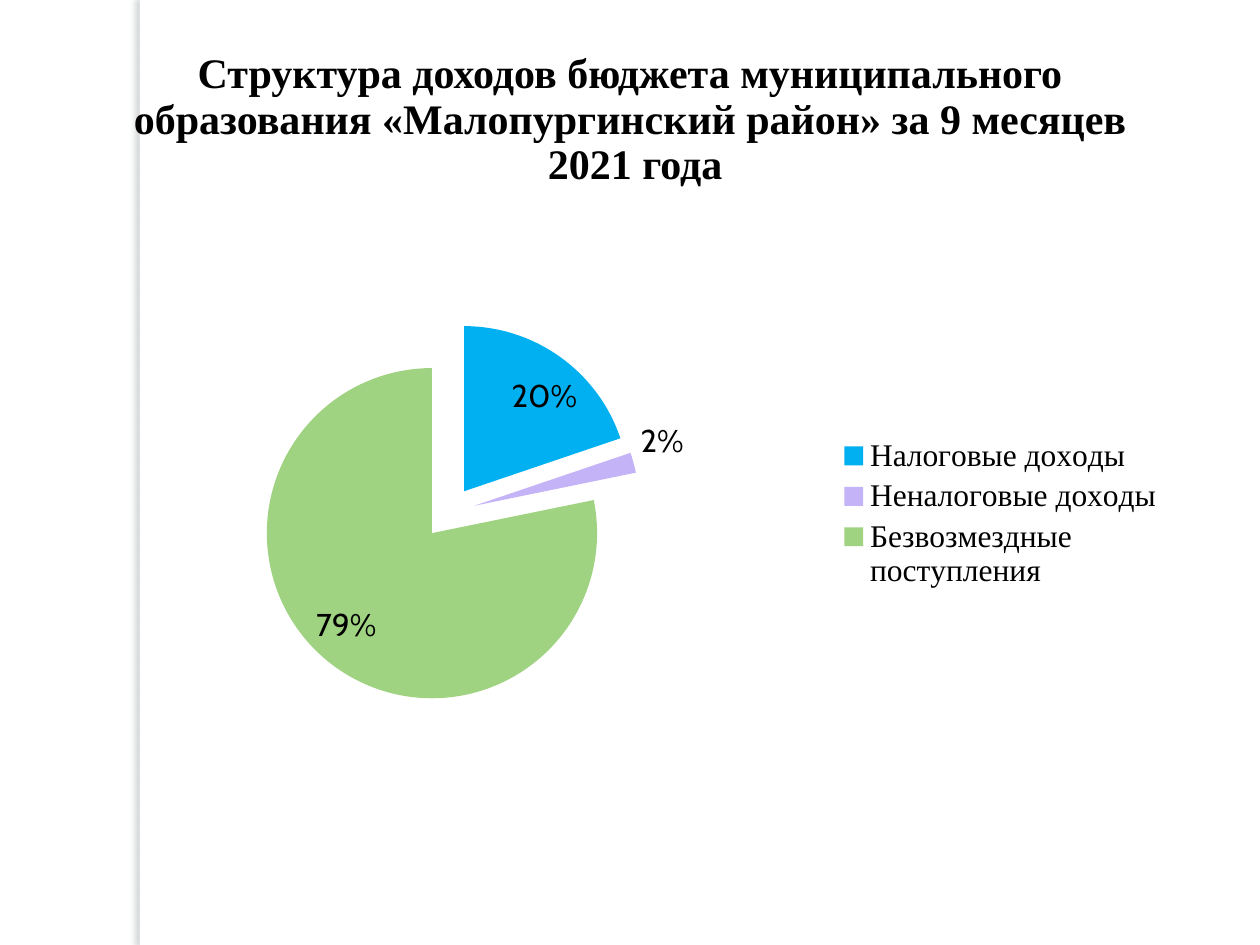
from lxml import etree
from pptx import Presentation
from pptx import util as u
from pptx.chart.data import CategoryChartData
from pptx.dml.color import RGBColor
from pptx.enum import chart as ch, shapes, text
from pptx.oxml import parse_xml
from pptx.oxml.ns import nsdecls, qn

# Content
TITLE = ("Структура доходов бюджета муниципального образования "
         "«Малопургинский район» за 9 месяцев\v 2021 года")
INCOME = [
    ("Налоговые доходы", 20, "tax"),
    ("Неналоговые доходы", 2, "other"),
    ("Безвозмездные поступления", 79, "grant"),
]
HEX = {"tax": "00B0F0", "other": "C5B3F7", "grant": "A0D381",
       "ink": "000000", "paper": "FFFFFF", "shade": "656E75"}
SERIF, SANS = "Times New Roman", "Cabin"
PLOT = {"x": 0.122, "y": 0.183, "w": 0.46, "h": 0.632}


def rgb(name):
    return RGBColor.from_string(HEX[name])


def style(font, face=SERIF, size=18, bold=False):
    font.name, font.size, font.bold = face, u.Pt(size), bold
    font.color.rgb = rgb("ink")


def write(frame, words, align=text.PP_ALIGN.CENTER, lead=0.9, **look):
    frame.text = words
    frame.word_wrap = True
    frame.vertical_anchor = text.MSO_ANCHOR.MIDDLE
    para = frame.paragraphs[0]
    para.alignment, para.line_spacing = align, lead
    for run in para.runs:
        style(run.font, **look)


def place(shape, left, top, width, height):
    shape.left, shape.top = u.Cm(left), u.Cm(top)
    shape.width, shape.height = u.Cm(width), u.Cm(height)


def add_strip(slide):
    strip = slide.shapes.add_shape(shapes.MSO_SHAPE.RECTANGLE, u.Cm(2.82), 0,
                                   u.Cm(0.2), u.Cm(19.05))
    strip.fill.solid()
    strip.fill.fore_color.rgb = rgb("paper")
    strip.line.fill.background()
    strip.shadow.inherit = False
    glow = strip._element.spPr.find(qn("a:effectLst"))
    glow.append(parse_xml(
        f'<a:outerShdw {nsdecls("a")} blurRad="{u.Pt(3)}" dist="{u.Pt(3)}" '
        f'dir="10800000"><a:srgbClr val="{HEX["shade"]}">'
        '<a:alpha val="25000"/></a:srgbClr></a:outerShdw>'))
    slide.shapes._spTree.insert(2, strip._element)  # behind the title


def add_pie(slide):
    data = CategoryChartData()
    data.categories = [name for name, _, _ in INCOME]
    data.add_series("Доходы", [share for _, share, _ in INCOME])
    pie = slide.shapes.add_chart(ch.XL_CHART_TYPE.PIE, u.Cm(1.07), u.Cm(4.24),
                                 u.Cm(22.66), u.Cm(12.22), data).chart
    style(pie.font, face=SANS)
    pie.has_title = False
    pie.has_legend = True
    pie.legend.position = ch.XL_LEGEND_POSITION.RIGHT
    pie.legend.include_in_layout = False
    style(pie.legend.font)

    # Slices
    plot = pie.plots[0]
    plot.vary_by_categories = True
    series = plot.series[0]
    for i, (_, _, tint) in enumerate(INCOME):
        fill = series.points[i].format.fill
        fill.solid()
        fill.fore_color.rgb = rgb(tint)
    burst = etree.Element(qn("c:explosion"), val="16")
    series._element.find(qn("c:dPt")).addprevious(burst)
    for point in series._element.findall(qn("c:dPt")):
        point.find(qn("c:spPr")).addprevious(
            etree.Element(qn("c:explosion"), val="16"))

    # Labels
    plot.has_data_labels = True
    labels = plot.data_labels
    labels.show_value = True
    labels.number_format = '0"%"'
    labels.number_format_is_linked = False
    labels.position = ch.XL_LABEL_POSITION.BEST_FIT
    style(labels.font, face=SANS)

    # Plot area
    area = pie._chartSpace.chart.plotArea
    for old in area.findall(qn("c:layout")):
        area.remove(old)
    spots = "".join(f'<c:{k} val="{v}"/>' for k, v in PLOT.items())
    area.insert(0, parse_xml(
        f'<c:layout {nsdecls("c")}><c:manualLayout>'
        '<c:layoutTarget val="inner"/><c:xMode val="edge"/>'
        f'<c:yMode val="edge"/>{spots}</c:manualLayout></c:layout>'))


def main():
    deck = Presentation()
    deck.slide_width, deck.slide_height = u.Cm(25.4), u.Cm(19.05)
    slide = deck.slides.add_slide(deck.slide_layouts[5])
    add_strip(slide)
    title = slide.shapes.title
    place(title, 1.27, 0.84, 22.86, 3.18)
    write(title.text_frame, TITLE, size=24, bold=True)
    add_pie(slide)
    deck.save("out.pptx")


if __name__ == "__main__":
    main()
